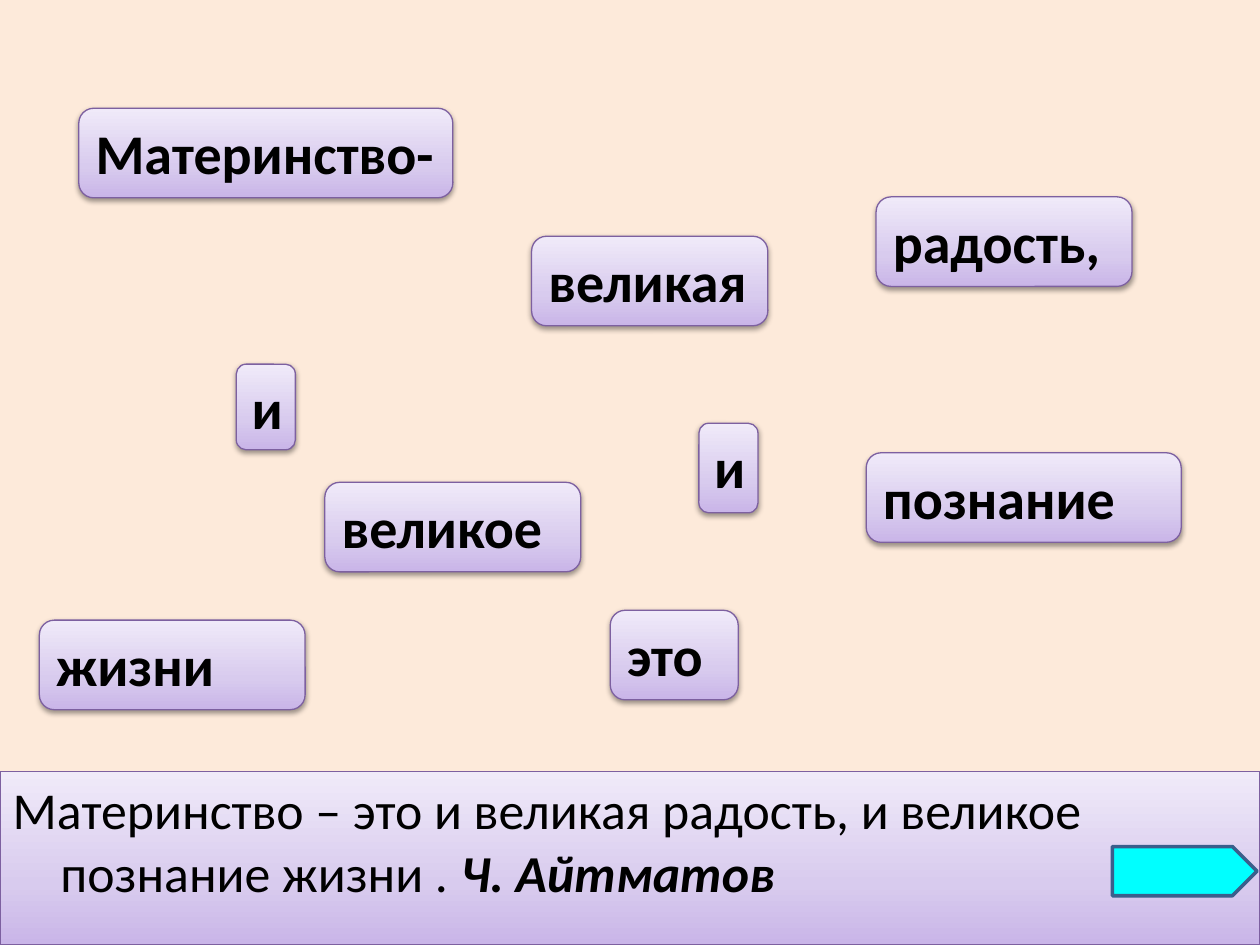
"""Build a word puzzle slide about motherhood with its solution at the bottom."""
from dataclasses import dataclass

from lxml.etree import SubElement
from pptx import Presentation
from pptx.dml.color import RGBColor
from pptx.enum.shapes import MSO_SHAPE as Preset
from pptx.enum.text import MSO_ANCHOR as Anchor, MSO_AUTO_SIZE as AutoSize, PP_ALIGN as Align
from pptx.oxml.ns import qn
from pptx.util import Emu, Inches, Pt

COLORS = {
    "page": "FDEADA", "text": "000000", "shadow": "000000",
    "lilac": "C9B5E8", "pale_lilac": "D8CBEE", "mist": "F0EAF9", "violet": "7D60A0",
    "arrow": "00FFFF", "arrow_edge": "3A5F8C",
}
LILAC_STOPS = ((0, "lilac"), (35, "pale_lilac"), (100, "mist"))
FONT = "Calibri"
COLUMNS, ROWS = 128, 96
UNIT = Inches(10) / COLUMNS


@dataclass(frozen=True)
class Box:
    column: float
    row: float
    columns: float
    rows: float = 9.1

    def lengths(self) -> list[Emu]:
        return [Emu(round(n * UNIT)) for n in (self.column, self.row, self.columns, self.rows)]


@dataclass(frozen=True)
class Card:
    word: str
    box: Box


CARDS = (
    Card("Материнство-", Box(8, 11, 38)),
    Card("это", Box(62, 62, 13)),
    Card("и", Box(71, 43, 6)),
    Card("великая", Box(54, 24, 24)),
    Card("радость,", Box(89, 20, 26)),
    Card("и", Box(24, 37, 6, 8.7)),
    Card("великое", Box(33, 49, 26)),
    Card("познание", Box(88, 46, 32)),
    Card("жизни", Box(4, 63, 27)),
)
QUOTE_BOX = Box(0, 78.4, COLUMNS, ROWS - 78.4)
ARROW_BOX = Box(113, 86, 14.7, 5)


def color(name: str) -> RGBColor:
    return RGBColor.from_string(COLORS[name])


def outline(shape, name: str, width: float) -> None:
    shape.line.color.rgb = color(name)
    shape.line.width = Pt(width)


def style_lilac(shape) -> None:
    shape.fill.gradient()
    shape.fill.gradient_angle = 90
    stops = shape.element.spPr.find(qn("a:gradFill")).find(qn("a:gsLst"))
    for old_stop in list(stops):
        stops.remove(old_stop)
    for percent, name in LILAC_STOPS:
        stop = SubElement(stops, qn("a:gs"), pos=str(percent * 1000))
        SubElement(stop, qn("a:srgbClr"), val=COLORS[name])
    outline(shape, "violet", 0.75)
    effects = SubElement(shape.element.spPr, qn("a:effectLst"))
    shadow = SubElement(effects, qn("a:outerShdw"), blurRad=str(Pt(3.1)),
                        dist=str(Pt(1.6)), dir="5400000", rotWithShape="0")
    tint = SubElement(shadow, qn("a:srgbClr"), val=COLORS["shadow"])
    SubElement(tint, qn("a:alpha"), val="38000")


def add_run(paragraph, words: str, size: float, bold: bool = False, italic: bool = False) -> None:
    run = paragraph.add_run()
    run.text = words
    run.font.name, run.font.size = FONT, Pt(size)
    run.font.bold, run.font.italic = bold, italic
    run.font.color.rgb = color("text")


def draw_card(slide, card: Card) -> None:
    tile = slide.shapes.add_shape(Preset.ROUNDED_RECTANGLE, *card.box.lengths())
    style_lilac(tile)
    frame = tile.text_frame
    frame.word_wrap, frame.auto_size = True, AutoSize.SHAPE_TO_FIT_TEXT
    frame.vertical_anchor = Anchor.TOP
    line = frame.paragraphs[0]
    line.alignment = Align.LEFT
    add_run(line, card.word, 32, bold=True)


def draw_quote(quote) -> None:
    quote.left, quote.top, quote.width, quote.height = QUOTE_BOX.lengths()
    style_lilac(quote)
    quote.text_frame.auto_size = AutoSize.NONE
    sentence = quote.text_frame.paragraphs[0]
    sentence.space_before = Pt(6)
    layout = sentence._p.get_or_add_pPr()
    layout.set("marL", str(Inches(0.38)))
    layout.set("indent", str(Inches(-0.38)))
    SubElement(layout, qn("a:buNone"))
    add_run(sentence, "Материнство – это и великая радость, и великое познание жизни . ", 29.6)
    add_run(sentence, "Ч. Айтматов", 29.6, bold=True, italic=True)


def draw_arrow(slide) -> None:
    arrow = slide.shapes.add_shape(Preset.PENTAGON, *ARROW_BOX.lengths())
    arrow.shadow.inherit = False
    arrow.fill.solid()
    arrow.fill.fore_color.rgb = color("arrow")
    outline(arrow, "arrow_edge", 2)


def main() -> None:
    deck = Presentation()
    deck.slide_width, deck.slide_height = Inches(10), Inches(7.5)
    slide = deck.slides.add_slide(deck.slide_layouts[1])
    slide.background.fill.solid()
    slide.background.fill.fore_color.rgb = color("page")
    heading = slide.shapes.title.element
    heading.getparent().remove(heading)
    draw_quote(slide.placeholders[1])
    for card in CARDS:
        draw_card(slide, card)
    draw_arrow(slide)
    deck.save("out.pptx")


if __name__ == "__main__":
    main()
